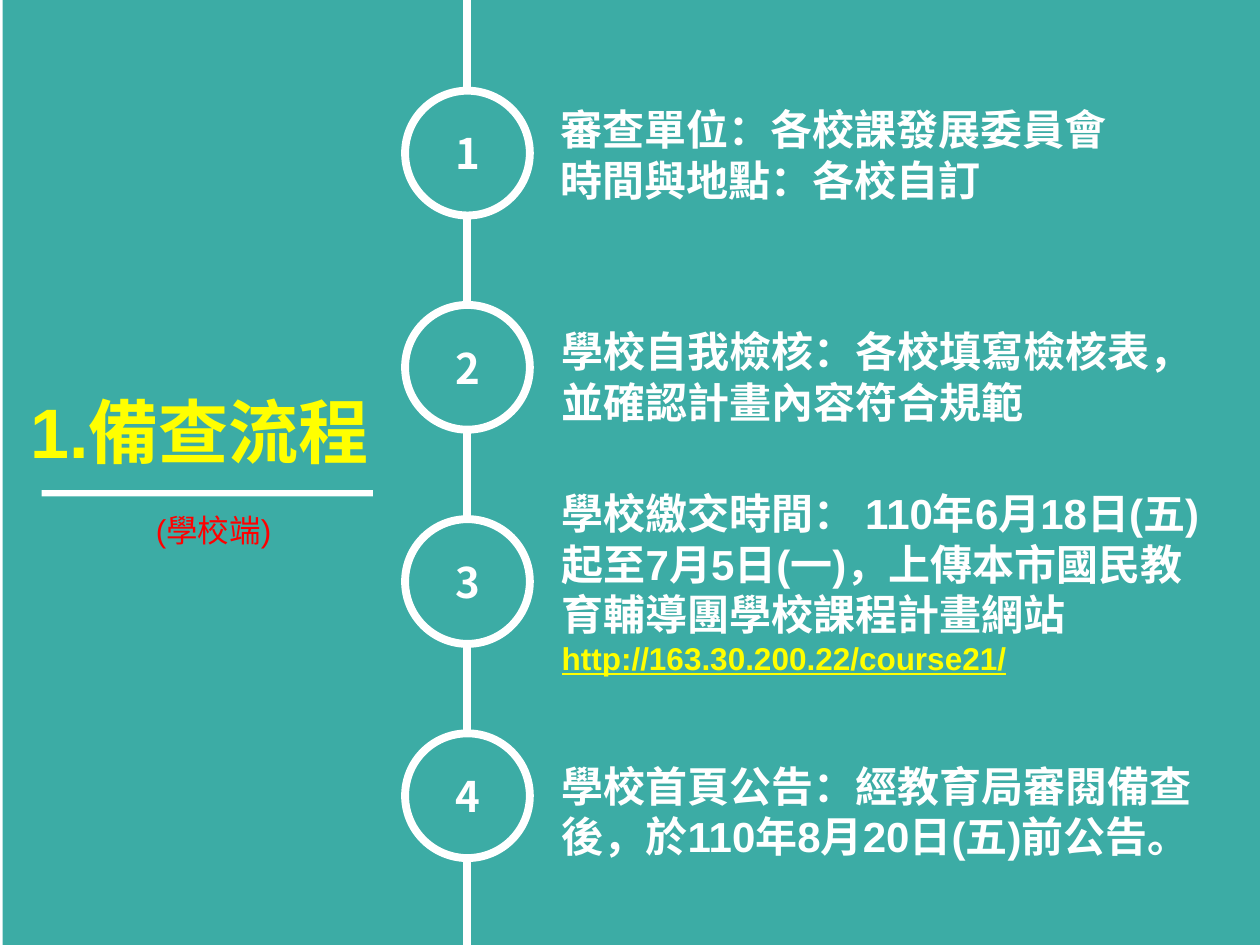
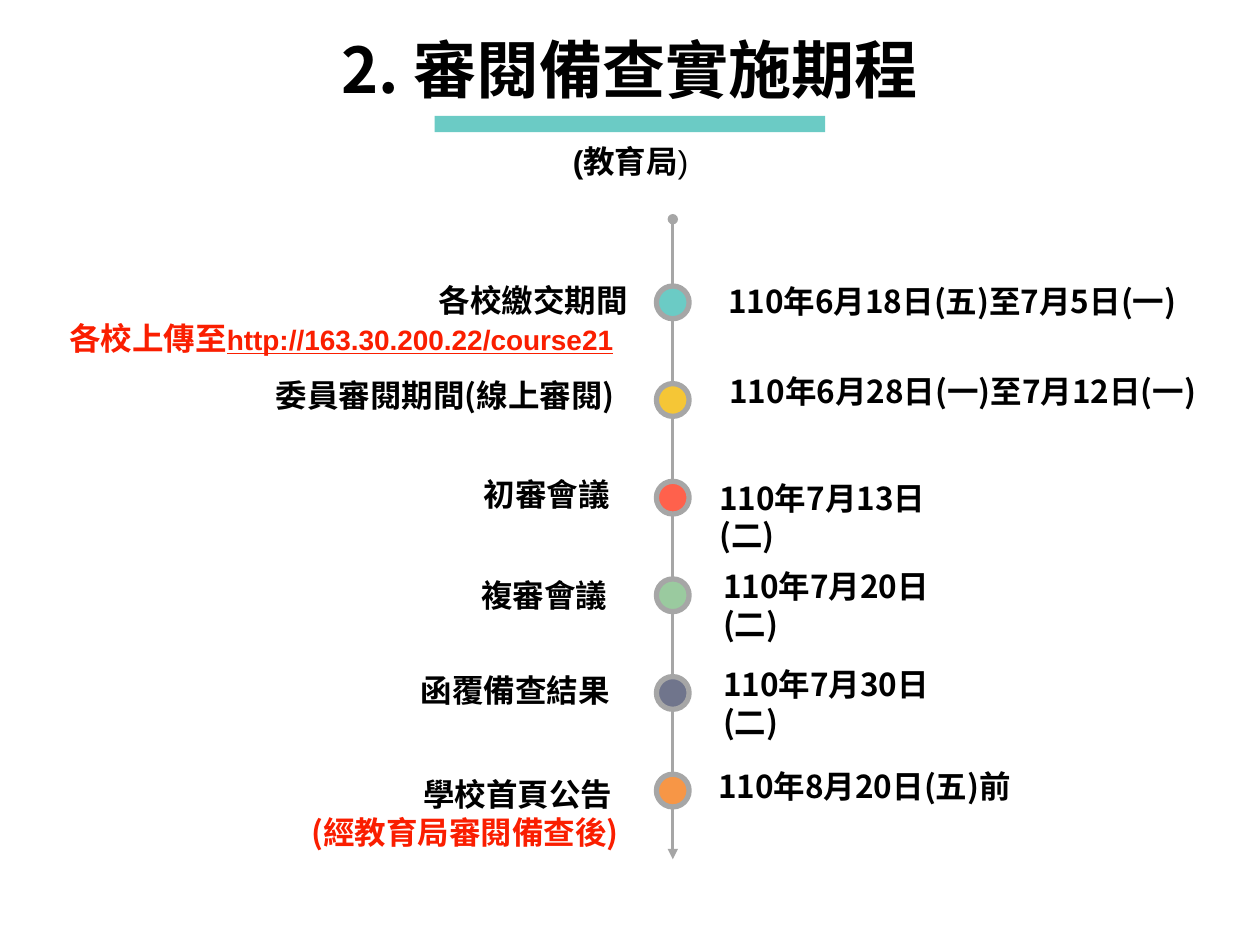
from lxml import etree
from pptx import Presentation
from pptx.dml.color import RGBColor
from pptx.enum.shapes import MSO_CONNECTOR, MSO_SHAPE
from pptx.enum.text import MSO_ANCHOR, MSO_AUTO_SIZE, PP_ALIGN
from pptx.oxml.ns import qn
from pptx.util import Inches, Pt

LEFT, CENTER, RIGHT = PP_ALIGN.LEFT, PP_ALIGN.CENTER, PP_ALIGN.RIGHT
TOP, MIDDLE = MSO_ANCHOR.TOP, MSO_ANCHOR.MIDDLE
RECTANGLE, OVAL = MSO_SHAPE.RECTANGLE, MSO_SHAPE.OVAL

WHITE = RGBColor(0xFF, 0xFF, 0xFF)
BLACK = RGBColor(0, 0, 0)
YELLOW = RGBColor(0xFF, 0xFF, 0)
RED = RGBColor(0xFF, 0, 0)
SCARLET = RGBColor(0xFA, 0x1E, 0)
GRAY = RGBColor(0xA6, 0xA6, 0xA6)
DEEP_TEAL = RGBColor(0x3C, 0xAC, 0xA5)
TEAL = RGBColor(0x6B, 0xCB, 0xC5)
GOLD = RGBColor(0xF5, 0xC6, 0x36)
CORAL = RGBColor(0xFF, 0x61, 0x4C)
GREEN = RGBColor(0x9A, 0xCA, 0x9F)
SLATE = RGBColor(0x70, 0x75, 0x8C)
ORANGE = RGBColor(0xF7, 0x96, 0x46)

SANS, CJK = "Arial", "Noto Sans CJK SC"
WIDTH, HEIGHT = 10, 7.5

# A paragraph is a list of runs; a run is its text and what differs in style.
STEP_STYLE = dict(name=SANS, size=24, color=WHITE, bold=True)
NUMBER_STYLE = dict(STEP_STYLE, name=CJK)
STAGE_STYLE = dict(name=CJK, size=18, color=BLACK, bold=True)
ALERT = dict(color=SCARLET)

# Box of each step's text, then its paragraphs
STEPS = [
    ((4.35, 0.77, 5.37, 0.91), [[("審查單位：各校課發展委員會", {})],
                                [("時間與地點：各校自訂", {})]]),
    ((4.36, 2.53, 5.37, 0.91), [[("學校自我檢核：各校填寫檢核表，並確認計畫內容符合規範", {})]]),
    ((4.36, 3.81, 5.37, 1.62), [
        [("學校繳交時間： 110年6月18日(五)起至7月5日(一)，上傳本市國民教育輔導團學校課程計畫網站", {})],
        [("http://163.30.200.22/course21/", dict(size=18, color=YELLOW, underline=True))]]),
    ((4.36, 5.98, 5.37, 0.91), [[("學校首頁公告：經教育局審閱備查後，於110年8月20日(五)前公告。", {})]]),
]
STEP_GAP, RING_TOP, RING_SIZE, RING_CENTER = 1.7, 0.72, 0.99, 3.71

# Dot colour; label left, rise above the dot, width, paragraphs and alignments;
# date left, rise, width and text
STAGES = [
    (TEAL, (0.34, 0.09, 4.74),
     [[("各校繳交期間", {})],
      [("各校上傳至", ALERT),
       ("http://163.30.200.22/course21", dict(ALERT, name=SANS, size=16, underline=True))]],
     (RIGHT, CENTER), (5.68, 0.08, 3.94), "110年6月18日(五)至7月5日(一)"),
    (GOLD, (2.09, 0.11, 4.21), [[("委員審閱期間(線上審閱)", {})]], (LEFT,),
     (5.69, 0.14, 3.94), "110年6月28日(一)至7月12日(一)"),
    (CORAL, (3.74, 0.1, 1.48), [[("初審會議", {})]], (LEFT,),
     (5.61, 0.07, 2.18), "110年7月13日(二)"),
    (GREEN, (3.72, 0.07, 1.43), [[("複審會議", {})]], (LEFT,),
     (5.64, 0.14, 2.18), "110年7月20日(二)"),
    (SLATE, (3.24, 0.09, 4.21), [[("函覆備查結果", {})]], (LEFT,),
     (5.64, 0.14, 2.18), "110年7月30日(二)"),
    (ORANGE, (2.1, 0.04, 3.18),
     [[("學校首頁公告", {})], [("(經教育局審閱備查後)", ALERT)]],
     (CENTER, CENTER), (5.6, 0.11, 2.55), "110年8月20日(五)前"),
]
STAGE_GAP, DOT_TOP, DOT_SIZE, AXIS = 0.775, 2.27, 0.26, 5.34
LINE_HEIGHT = 1.2
LAST_LABEL_INDENT = 0.84


def set_font(font, name, size, color, bold=False, underline=False):
    font.name, font.size, font.bold = name, Pt(size), bold
    font.color.rgb = color
    if underline:
        font.underline = True


def write(shape, paragraphs, style, alignments=(LEFT,), anchor=TOP):
    """Fill a shape with text; the last alignment serves all further paragraphs."""
    frame = shape.text_frame
    frame.word_wrap = True
    frame.auto_size = MSO_AUTO_SIZE.NONE
    frame.vertical_anchor = anchor
    for index, runs in enumerate(paragraphs):
        paragraph = frame.add_paragraph() if index else frame.paragraphs[0]
        paragraph.alignment = alignments[min(index, len(alignments) - 1)]
        styles = [{**style, **changes} for _, changes in runs]
        paragraph.line_spacing = Pt(LINE_HEIGHT * max(item["size"] for item in styles))
        for (text, _), run_style in zip(runs, styles):
            run = paragraph.add_run()
            run.text = text
            set_font(paragraph.font if len(runs) == 1 else run.font, **run_style)


def add_text(slide, box, paragraphs, style, alignments=(LEFT,), anchor=TOP):
    shape = slide.shapes.add_textbox(*map(Inches, box))
    write(shape, paragraphs, style, alignments, anchor)
    return shape


def add_title(slide, box, text, style):
    title = slide.shapes.title
    title.left, title.top, title.width, title.height = map(Inches, box)
    write(title, [[(text, {})]], style, (CENTER,), MIDDLE)
    slide.shapes._spTree.append(title._element)  # in front of the backdrop


def add_shape(slide, preset, box, fill=None, line=None, line_width=0):
    shape = slide.shapes.add_shape(preset, *map(Inches, box))
    shape.shadow.inherit = False
    if fill is None:
        shape.fill.background()
    else:
        shape.fill.solid()
        shape.fill.fore_color.rgb = fill
    if line is None:
        shape.line.fill.background()
    else:
        shape.line.color.rgb = line
        shape.line.width = Pt(line_width)
    return shape


def add_vertical_line(slide, x, top, bottom, color, width):
    line = slide.shapes.add_connector(
        MSO_CONNECTOR.STRAIGHT, Inches(x), Inches(top), Inches(x), Inches(bottom))
    line.line.color.rgb = color
    line.line.width = Pt(width)
    etree.SubElement(line._element.spPr, qn("a:effectLst"))
    return line


def build_process(slide):
    add_shape(slide, RECTANGLE, (0.02, 0, WIDTH - 0.02, HEIGHT), DEEP_TEAL)
    add_shape(slide, RECTANGLE, (0.33, 3.89, 2.63, 0.05), WHITE)
    add_title(slide, (-0.29, 3.03, 3.75, 0.77), "1.備查流程",
              dict(name=SANS, size=40, color=YELLOW, bold=True))
    add_text(slide, (0.67, 4.01, 2.05, 0.4), [[("(學校端)", {})]],
             dict(name=SANS, size=18, color=RED), (CENTER,))

    add_vertical_line(slide, RING_CENTER, 0, RING_TOP, WHITE, 4.5)
    for index, (box, paragraphs) in enumerate(STEPS):
        top = RING_TOP + index * STEP_GAP
        ring = add_shape(slide, OVAL, (RING_CENTER - RING_SIZE / 2, top, RING_SIZE, RING_SIZE),
                         line=WHITE, line_width=4.5)
        write(ring, [[(str(index + 1), {})]], NUMBER_STYLE, (CENTER,), MIDDLE)
        add_vertical_line(slide, RING_CENTER, top + RING_SIZE,
                          min(top + STEP_GAP, HEIGHT), WHITE, 4.5)
        add_text(slide, box, paragraphs, STEP_STYLE, anchor=MIDDLE)


def build_schedule(slide):
    add_shape(slide, RECTANGLE, (3.45, 0.92, 3.1, 0.13), TEAL)
    add_title(slide, (2.26, 0.19, 5.47, 0.71), "2. 審閱備查實施期程",
              dict(STAGE_STYLE, size=36))
    add_text(slide, (3.98, 1.08, 2.05, 0.4), [[("(教育局", {}), (")", dict(bold=False))]],
             dict(STAGE_STYLE, name=SANS), (CENTER,))

    axis = add_vertical_line(slide, AXIS, 1.74, 6.82, GRAY, 1.5)
    outline = axis.line._get_or_add_ln()
    for end, kind in (("a:headEnd", "oval"), ("a:tailEnd", "triangle")):
        etree.SubElement(outline, qn(end)).set("type", kind)

    for index, (color, label_place, label, alignments, date_place, date) in enumerate(STAGES):
        top = DOT_TOP + index * STAGE_GAP
        add_shape(slide, OVAL, (AXIS - DOT_SIZE / 2, top, DOT_SIZE, DOT_SIZE), color, GRAY, 3)
        left, rise, width = label_place
        height = 0.1 + 0.3 * len(label)
        label_box = add_text(slide, (left, top - rise, width, height), label,
                             STAGE_STYLE, alignments)
        left, rise, width = date_place
        add_text(slide, (left, top - rise, width, 0.4), [[(date, {})]], STAGE_STYLE)
    first_line = label_box.text_frame.paragraphs[0]
    first_line._p.get_or_add_pPr().set("marL", str(Inches(LAST_LABEL_INDENT)))


def main():
    presentation = Presentation()
    presentation.slide_width, presentation.slide_height = Inches(WIDTH), Inches(HEIGHT)
    title_only = presentation.slide_layouts[5]
    for build in (build_process, build_schedule):
        build(presentation.slides.add_slide(title_only))
    presentation.save("out.pptx")


if __name__ == "__main__":
    main()
